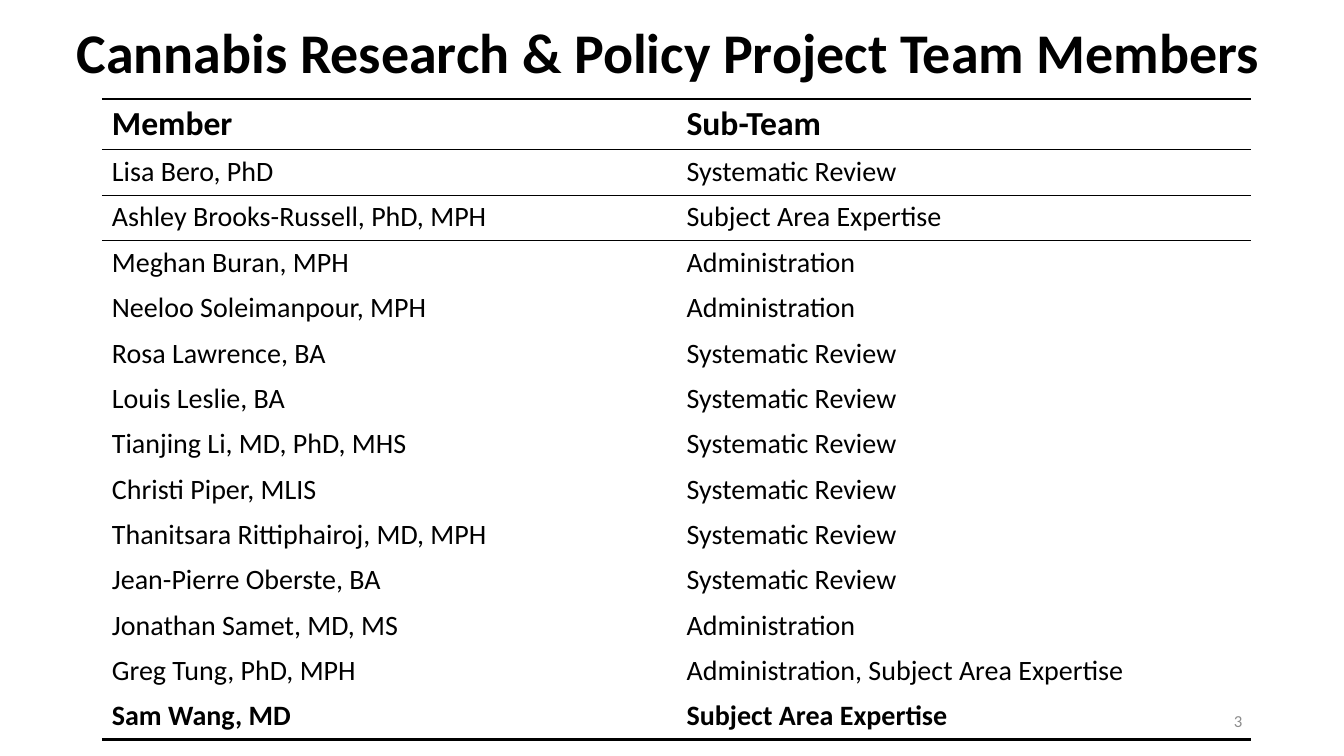
import pptx
import pptx.dml.color
import pptx.enum.text
import pptx.oxml
import pptx.oxml.ns
import pptx.util

COLORS = {"ink": "000000", "paper": "FFFFFF", "number": "8C8C8C"}
SLIDE_WIDTH, SLIDE_HEIGHT = 13.33, 7.5
TABLE_LEFT, TABLE_TOP = 1.01, 0.98
COLUMN_WIDTH = 5.7
HEADER_HEIGHT, MEMBER_HEIGHT = 0.5, 0.45
NO_GRID_STYLE = "{2D5ABB26-0587-4C30-8999-92F81FD0307C}"

MEMBERS = [
    ("Member", "Sub-Team"),
    ("Lisa Bero, PhD", "Systematic Review"),
    ("Ashley Brooks-Russell, PhD, MPH", "Subject Area Expertise"),
    ("Meghan Buran, MPH", "Administration"),
    ("Neeloo Soleimanpour, MPH", "Administration"),
    ("Rosa Lawrence, BA", "Systematic Review"),
    ("Louis Leslie, BA", "Systematic Review"),
    ("Tianjing Li, MD, PhD, MHS", "Systematic Review"),
    ("Christi Piper, MLIS", "Systematic Review"),
    ("Thanitsara Rittiphairoj, MD, MPH", "Systematic Review"),
    ("Jean-Pierre Oberste, BA", "Systematic Review"),
    ("Jonathan Samet, MD, MS", "Administration"),
    ("Greg Tung, PhD, MPH", "Administration, Subject Area Expertise"),
    ("Sam Wang, MD", "Subject Area Expertise"),
]
LAST_ROW = len(MEMBERS) - 1
RULES = {0: 2, 1: 1, 2: 1, LAST_ROW + 1: 2}


def add_run(paragraph, text, size, color, bold=False):
    run = paragraph.add_run()
    run.text = text
    run.font.name = "Calibri"
    run.font.size = pptx.util.Pt(size)
    run.font.bold = bold
    run.font.color.rgb = pptx.dml.color.RGBColor.from_string(COLORS[color])


def add_border(cell, side, points):
    cell._tc.get_or_add_tcPr().append(pptx.oxml.parse_xml(
        f'<a:{side} {pptx.oxml.ns.nsdecls("a")} w="{pptx.util.Pt(points)}">'
        f'<a:solidFill><a:srgbClr val="{COLORS["ink"]}"/></a:solidFill></a:{side}>'))


presentation = pptx.Presentation()
presentation.slide_width = pptx.util.Inches(SLIDE_WIDTH)
presentation.slide_height = pptx.util.Inches(SLIDE_HEIGHT)
slide = presentation.slides.add_slide(presentation.slide_layouts[5])

title = slide.shapes.title
title.left, title.top = pptx.util.Inches(-0.08), 0
title.width, title.height = pptx.util.Inches(13.41), pptx.util.Inches(1.1)
title.text_frame.vertical_anchor = pptx.enum.text.MSO_ANCHOR.MIDDLE
title.text_frame.auto_size = pptx.enum.text.MSO_AUTO_SIZE.NONE
paragraph = title.text_frame.paragraphs[0]
paragraph.alignment = pptx.enum.text.PP_ALIGN.CENTER
paragraph.line_spacing = 0.9
add_run(paragraph, "Cannabis Research & Policy Project Team Members", 40, "ink", True)

table = slide.shapes.add_table(
    len(MEMBERS), 2,
    pptx.util.Inches(TABLE_LEFT), pptx.util.Inches(TABLE_TOP),
    pptx.util.Inches(2 * COLUMN_WIDTH),
    pptx.util.Inches(HEADER_HEIGHT + LAST_ROW * MEMBER_HEIGHT)).table
table.first_row = table.horz_banding = False
table._tbl.tblPr.find(pptx.oxml.ns.qn("a:tableStyleId")).text = NO_GRID_STYLE
for column in table.columns:
    column.width = pptx.util.Inches(COLUMN_WIDTH)

for row_index, member in enumerate(MEMBERS):
    is_header = row_index == 0
    table.rows[row_index].height = pptx.util.Inches(HEADER_HEIGHT if is_header else MEMBER_HEIGHT)
    for column_index, text in enumerate(member):
        cell = table.cell(row_index, column_index)
        for side, rule in (("lnT", row_index), ("lnB", row_index + 1)):
            if rule in RULES:
                add_border(cell, side, RULES[rule])
        cell.fill.solid()
        cell.fill.fore_color.rgb = pptx.dml.color.RGBColor.from_string(COLORS["paper"])
        add_run(cell.text_frame.paragraphs[0], text, 24 if is_header else 20,
                "ink", row_index in (0, LAST_ROW))

number_box = slide.shapes.add_textbox(
    pptx.util.Inches(9.42), pptx.util.Inches(6.95), pptx.util.Inches(3), pptx.util.Inches(0.4))
number_box.text_frame.word_wrap = True
number_box.text_frame.vertical_anchor = pptx.enum.text.MSO_ANCHOR.MIDDLE
paragraph = number_box.text_frame.paragraphs[0]
paragraph.alignment = pptx.enum.text.PP_ALIGN.RIGHT
add_run(paragraph, "3", 12, "number")

presentation.save("out.pptx")
